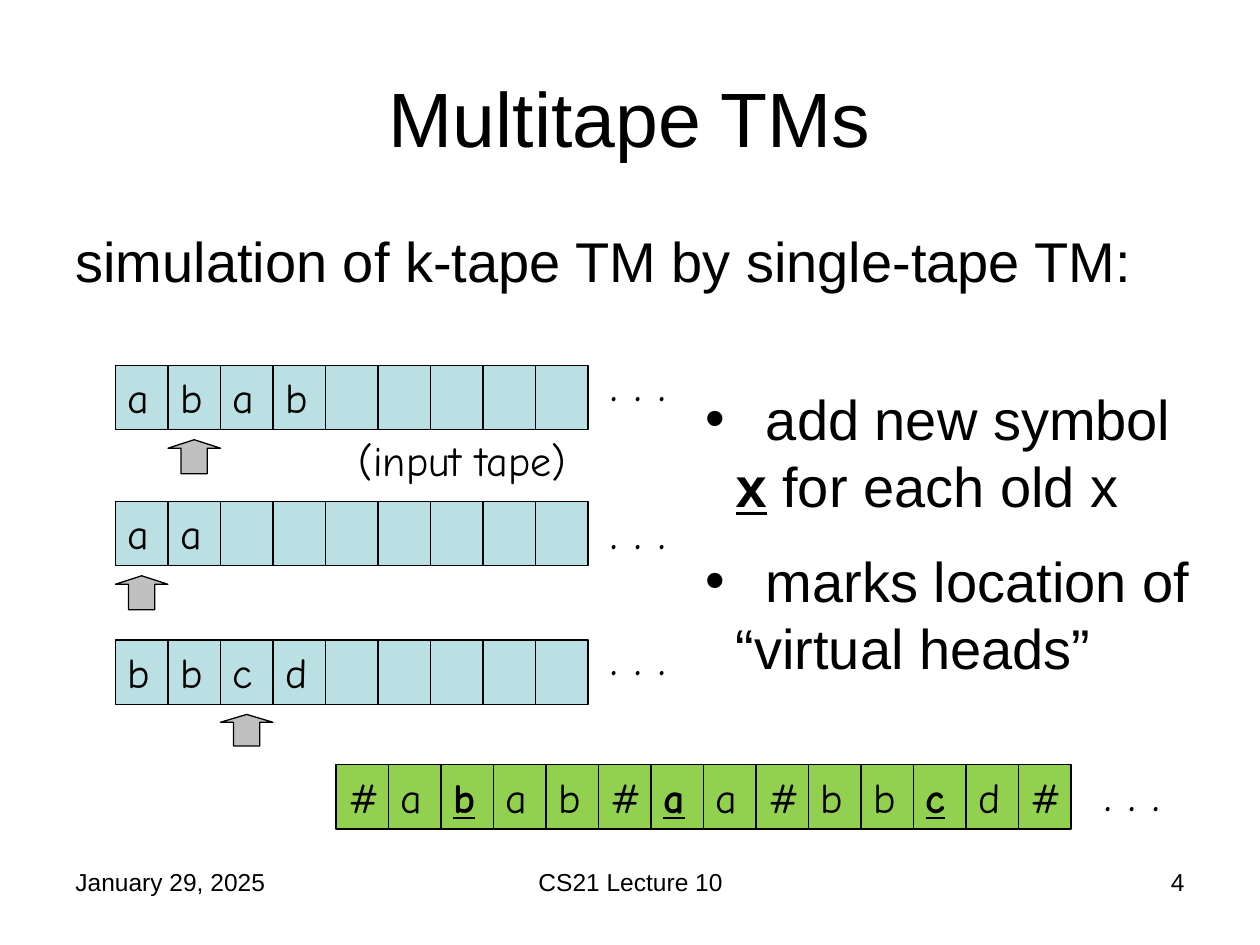
from lxml.etree import SubElement
from pptx import Presentation
from pptx.dml.color import RGBColor
from pptx.enum.shapes import MSO_SHAPE as SHAPE
from pptx.enum.text import MSO_ANCHOR as ANCHOR, PP_ALIGN as ALIGN
from pptx.oxml.ns import qn
from pptx.util import Inches, Pt

BLACK = RGBColor(0, 0, 0)
BLUE = RGBColor(0xBB, 0xE0, 0xE3)
GREEN = RGBColor(0x92, 0xD0, 0x50)
GRAY = RGBColor(0xC0, 0xC0, 0xC0)
SANS, COMIC = "Arial", "Comic Neue"
DOTS = ". . ."

# text, box, size, font, alignment, anchor
LABELS = [
    ("January 29, 2025", (0.5, 6.83, 2.33, 0.52), 14, SANS, ALIGN.LEFT, ANCHOR.TOP),
    ("CS21 Lecture 10", (3.42, 6.83, 3.17, 0.52), 14, SANS, ALIGN.CENTER, ANCHOR.TOP),
    ("4", (7.17, 6.83, 2.33, 0.52), 14, SANS, ALIGN.RIGHT, ANCHOR.TOP),
    ("Multitape TMs", (0.5, 0.3, 9, 1.25), 44, SANS, ALIGN.CENTER, ANCHOR.MIDDLE),
    ("simulation of k-tape TM by single-tape TM:", (0.5, 1.75, 9, 0.75), 32, SANS,
     ALIGN.LEFT, ANCHOR.TOP),
    ("(input tape)", (2.75, 3.4, 2.58, 0.5), 24, COMIC, ALIGN.LEFT, ANCHOR.TOP),
    (DOTS, (4.75, 2.75, 1.58, 0.57), 28, COMIC, ALIGN.LEFT, ANCHOR.TOP),
    (DOTS, (4.75, 3.92, 1.58, 0.57), 28, COMIC, ALIGN.LEFT, ANCHOR.TOP),
    (DOTS, (4.75, 4.92, 1.58, 0.57), 28, COMIC, ALIGN.LEFT, ANCHOR.TOP),
    (DOTS, (8.67, 6, 0.92, 0.57), 28, COMIC, ALIGN.LEFT, ANCHOR.TOP),
]
# symbols, top, head cell, head height
TAPES = [("abab", 2.9, 1, 0.27), ("aa", 3.98, 0, 0.27), ("bbcd", 5.08, 2, 0.25)]
TAPE_CELLS = 9
SINGLE_TAPE = "#abab#aa#bbcd#"
VIRTUAL_HEADS = {2, 6, 11}
# each point is a list of (text, marked)
POINTS = [
    [("add new symbol ", False), ("x", True), (" for each old x", False)],
    [("marks location of “virtual heads”", False)],
]
CELL_W, CELL_H = 5 / 12, 0.51
TAPE_LEFT, SINGLE_LEFT, SINGLE_TOP = 11 / 12, 8 / 3, 6.07
HEAD_DROP = 0.59

prs = Presentation()
prs.slide_width, prs.slide_height = Inches(10), Inches(7.5)
slide = prs.slides.add_slide(prs.slide_layouts[6])


def add_run(p, text, size, font, marked=False):
    r = p.add_run()
    r.text = text
    r.font.size, r.font.name = Pt(size), font
    r.font.color.rgb = BLACK
    if marked:
        r.font.bold = r.font.underline = True


def add_box(box):
    tf = slide.shapes.add_textbox(*map(Inches, box)).text_frame
    tf.word_wrap = True
    return tf


def add_outlined(kind, box, color):
    sp = slide.shapes.add_shape(kind, *map(Inches, box))
    sp.shadow.inherit = False
    sp.fill.solid()
    sp.fill.fore_color.rgb = color
    sp.line.color.rgb = BLACK
    sp.line.width = Pt(0.75)
    return sp


def add_tape(symbols, left, top, color, marked=()):
    for i, symbol in enumerate(symbols):
        box = (left + i * CELL_W, top, CELL_W, CELL_H)
        tf = add_outlined(SHAPE.RECTANGLE, box, color).text_frame
        if symbol.strip():
            tf.vertical_anchor = ANCHOR.TOP
            p = tf.paragraphs[0]
            p.alignment = ALIGN.LEFT
            add_run(p, symbol, 24, COMIC, i in marked)


def set_bullet(p, margin, text_start):
    """Hang a bullet at the margin and start the first line at a tab stop."""
    pPr = p._p.get_or_add_pPr()
    pPr.set("marL", str(Inches(margin)))
    pPr.set("indent", str(-Inches(margin)))
    SubElement(pPr, qn("a:buFont"), typeface=SANS)
    SubElement(pPr, qn("a:buChar"), char="•")
    tabs = SubElement(pPr, qn("a:tabLst"))
    SubElement(tabs, qn("a:tab"), pos=str(Inches(text_start)), algn="l")


for text, box, size, font, align, anchor in LABELS:
    tf = add_box(box)
    tf.vertical_anchor = anchor
    p = tf.paragraphs[0]
    p.alignment = align
    add_run(p, text, size, font)

for symbols, top, head, head_h in TAPES:
    add_tape(symbols.ljust(TAPE_CELLS), TAPE_LEFT, top, BLUE)
    head_box = (TAPE_LEFT + head * CELL_W, top + HEAD_DROP, CELL_W, head_h)
    arrow = add_outlined(SHAPE.UP_ARROW, head_box, GRAY)
    arrow.adjustments[0], arrow.adjustments[1] = 0.5, 0.25

add_tape(SINGLE_TAPE, SINGLE_LEFT, SINGLE_TOP, GREEN, VIRTUAL_HEADS)

tf = add_box((5.5, 3, 4.08, 2.5))
for i, runs in enumerate(POINTS):
    p = tf.add_paragraph() if i else tf.paragraphs[0]
    if i:
        p.space_before = Pt(16)
    set_bullet(p, 0.24, 0.48)
    add_run(p, "\t", 32, SANS)
    for text, marked in runs:
        add_run(p, text, 32, SANS, marked)

prs.save("out.pptx")
